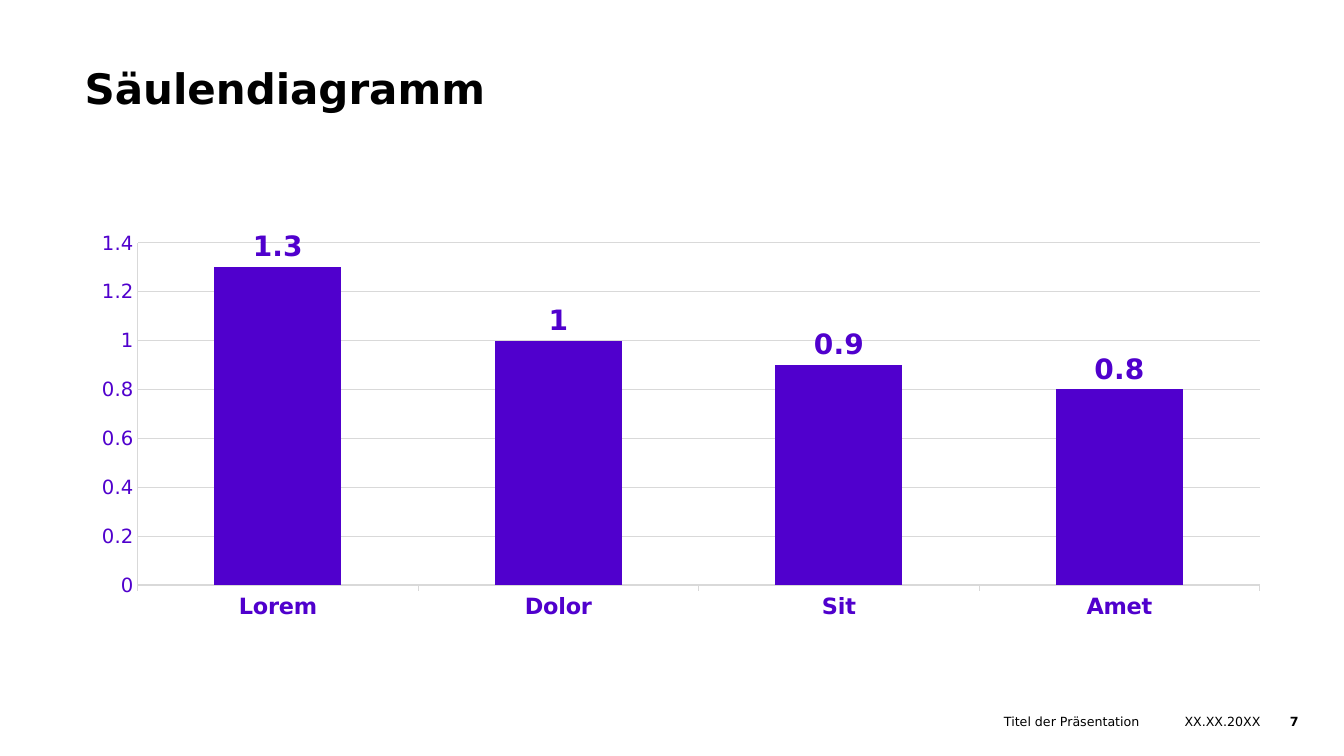
from dataclasses import dataclass

from lxml import etree
from pptx import Presentation
from pptx import util as u
from pptx.chart.data import CategoryChartData
from pptx.dml.color import RGBColor
from pptx.enum import chart as charts
from pptx.enum import text


@dataclass(frozen=True)
class Theme:
    font: str = "DejaVu Sans"
    ink: str = "000000"
    accent: str = "5000CD"
    rule: str = "D9D9D9"
    title_size: int = 30
    chart_size: int = 18
    category_size: int = 16
    value_size: int = 14
    label_size: int = 20
    footer_size: int = 9
    rule_width: float = 0.75


@dataclass(frozen=True)
class Label:
    content: str
    left: float
    top: float
    width: float
    height: float
    size: int
    bold: bool = False
    align: text.PP_ALIGN = text.PP_ALIGN.RIGHT
    anchor: text.MSO_ANCHOR = text.MSO_ANCHOR.MIDDLE
    bottom_inset: float = 0.04
    line_spacing: float = 1.0


THEME = Theme()
FOOTER_TOP, FOOTER_HEIGHT = 6.98, 0.39

TITLE = Label("Säulendiagramm", 0.84, 0.68, 10.46, 0.63, THEME.title_size, True,
              text.PP_ALIGN.LEFT, text.MSO_ANCHOR.TOP, 0, 0.9)
FOOTERS = [
    Label(content, left, FOOTER_TOP, width, FOOTER_HEIGHT, THEME.footer_size, bold)
    for content, left, width, bold in (
        ("XX.XX.20XX", 11.55, 0.95, False),
        ("Titel der Präsentation", 2.26, 9.04, False),
        ("7", 12.49, 0.39, True),
    )
]
COLUMNS = {"Lorem": 1.3, "Dolor": 1, "Sit": 0.9, "Amet": 0.8}
PLOT_AREA = {"x": 0.045, "y": 0.116, "w": 0.955, "h": 0.718}


def style_font(font, size: int, color: str, bold: bool) -> None:
    font.name = THEME.font
    font.size = u.Pt(size)
    font.bold = bold
    font.color.rgb = RGBColor.from_string(color)


def style_rule(line) -> None:
    line.color.rgb = RGBColor.from_string(THEME.rule)
    line.width = u.Pt(THEME.rule_width)


def add_label(slide, label: Label) -> None:
    shape = slide.shapes.add_textbox(u.Inches(label.left), u.Inches(label.top),
                                     u.Inches(label.width), u.Inches(label.height))
    frame = shape.text_frame
    frame.word_wrap = True
    frame.vertical_anchor = label.anchor
    frame.margin_left = frame.margin_top = frame.margin_right = 0
    frame.margin_bottom = u.Inches(label.bottom_inset)
    paragraph = frame.paragraphs[0]
    paragraph.alignment = label.align
    paragraph.line_spacing = label.line_spacing
    run = paragraph.add_run()
    run.text = label.content
    style_font(run.font, label.size, THEME.ink, label.bold)


def place_plot_area(chart) -> None:
    plot_area = chart.element.chart.plotArea
    namespace = etree.QName(plot_area).namespace
    for old_layout in plot_area.findall(f"{{{namespace}}}layout"):
        plot_area.remove(old_layout)
    layout = etree.Element(f"{{{namespace}}}layout")
    manual = etree.SubElement(layout, f"{{{namespace}}}manualLayout")
    settings = {"layoutTarget": "inner", "xMode": "edge", "yMode": "edge", **PLOT_AREA}
    for name, value in settings.items():
        etree.SubElement(manual, f"{{{namespace}}}{name}", val=str(value))
    plot_area.insert(0, layout)


def style_axis(axis, size: int, bold: bool, tick: charts.XL_TICK_MARK) -> None:
    axis.major_tick_mark = tick
    axis.minor_tick_mark = charts.XL_TICK_MARK.NONE
    style_font(axis.tick_labels.font, size, THEME.accent, bold)
    style_rule(axis.format.line)


def add_column_chart(slide) -> None:
    data = CategoryChartData()
    data.categories = list(COLUMNS)
    data.add_series("Series 1", list(COLUMNS.values()))
    chart = slide.shapes.add_chart(
        charts.XL_CHART_TYPE.COLUMN_CLUSTERED, u.Inches(0.84), u.Inches(1.86),
        u.Inches(11.66), u.Inches(4.73), data).chart
    chart.has_legend = False
    chart.has_title = False
    style_font(chart.font, THEME.chart_size, THEME.accent, True)
    place_plot_area(chart)

    style_axis(chart.category_axis, THEME.category_size, True, charts.XL_TICK_MARK.OUTSIDE)
    value_axis = chart.value_axis
    style_axis(value_axis, THEME.value_size, False, charts.XL_TICK_MARK.NONE)
    value_axis.minimum_scale, value_axis.maximum_scale = 0, 1.4
    value_axis.major_unit = 0.2
    value_axis.has_major_gridlines = True
    style_rule(value_axis.major_gridlines.format.line)

    plot = chart.plots[0]
    plot.gap_width = 121
    plot.vary_by_categories = False
    series = plot.series[0]
    series.format.fill.solid()
    series.format.fill.fore_color.rgb = RGBColor.from_string(THEME.accent)
    labels = series.data_labels
    labels.show_value = True
    labels.position = charts.XL_LABEL_POSITION.OUTSIDE_END
    style_font(labels.font, THEME.label_size, THEME.accent, True)


def main() -> None:
    presentation = Presentation()
    presentation.slide_width = u.Inches(13.33)
    presentation.slide_height = u.Inches(7.5)
    slide = presentation.slides.add_slide(presentation.slide_layouts[6])
    add_label(slide, TITLE)
    add_column_chart(slide)
    for footer in FOOTERS:
        add_label(slide, footer)
    presentation.save("out.pptx")


if __name__ == "__main__":
    main()
